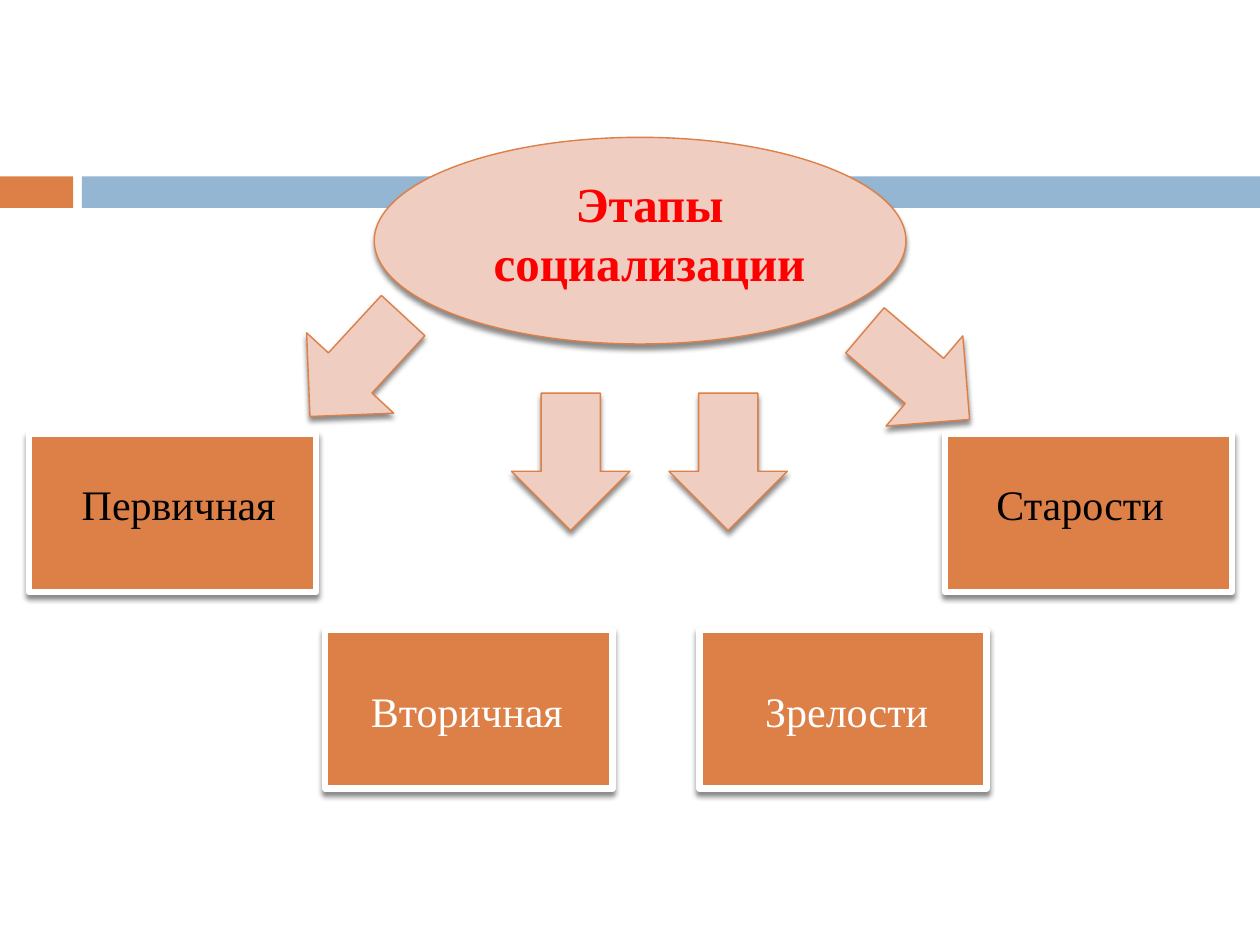
from lxml.etree import SubElement
from pptx import Presentation
from pptx.dml.color import RGBColor
from pptx.enum.shapes import MSO_SHAPE
from pptx.enum.text import MSO_ANCHOR, MSO_AUTO_SIZE, PP_ALIGN
from pptx.oxml.ns import qn
from pptx.util import Inches, Pt

HUES = {"orange": "DD8047", "blue": "94B6D2", "pink": "EFCDC1",
        "white": "FFFFFF", "black": "000000", "red": "FF0000"}
FONT = "Times New Roman"
TITLE = "Этапы социализации"
BANDS = [(0, 0.58, "orange"), (0.65, 9.35, "blue")]
STAGES = [
    ("Первичная", (0.23, 3.44), (0.55, 3.75, 1.88), PP_ALIGN.LEFT, "black"),
    ("Вторичная", (2.58, 5), (2.73, 5.39, 1.95), PP_ALIGN.CENTER, "white"),
    ("Зрелости", (5.55, 5), (5.78, 5.39, 1.88), PP_ALIGN.CENTER, "white"),
    ("Старости", (7.5, 3.44), (7.81, 3.75, 1.72), PP_ALIGN.LEFT, "black"),
]
ARROWS = [(2.36, 2.36, 42.7), (4.06, 3.12, 0), (5.31, 3.12, 0), (6.81, 2.43, 310.4)]


def color(name):
    return RGBColor.from_string(HUES[name])


def shade(shape):
    props = shape._element.spPr
    effects = props.find(qn("a:effectLst"))
    shadow = SubElement(effects, qn("a:outerShdw"), blurRad=str(Pt(3)),
                        dist=str(Pt(2.4)), dir="5400000", rotWithShape="0")
    tint = SubElement(shadow, qn("a:srgbClr"), val=HUES["black"])
    SubElement(tint, qn("a:alpha"), val="45000")


def draw(kind, box, fill, line=None, width=0):
    shape = slide.shapes.add_shape(kind, *map(Inches, box))
    shape.shadow.inherit = False
    shape.fill.solid()
    shape.fill.fore_color.rgb = color(fill)
    if line:
        shape.line.color.rgb = color(line)
        shape.line.width = Pt(width)
        shade(shape)
    else:
        shape.line.fill.background()
    return shape


def write(shape, box, text, size, hue, align, bold=False):
    shape.left, shape.top, shape.width, shape.height = map(Inches, box)
    frame = shape.text_frame
    frame.word_wrap = True
    frame.auto_size = MSO_AUTO_SIZE.SHAPE_TO_FIT_TEXT
    frame.vertical_anchor = MSO_ANCHOR.TOP
    para = frame.paragraphs[0]
    para.alignment = align
    run = para.add_run()
    run.text = text
    run.font.name = FONT
    run.font.size = Pt(size)
    run.font.bold = bold
    run.font.color.rgb = color(hue)


deck = Presentation()
deck.slide_width, deck.slide_height = Inches(10), Inches(7.5)
slide = deck.slides.add_slide(deck.slide_layouts[5])

for left, width, hue in BANDS:
    draw(MSO_SHAPE.RECTANGLE, (left, 1.4, width, 0.25), hue)
draw(MSO_SHAPE.OVAL, (2.97, 1.09, 4.22, 1.64), "pink", "orange", 0.79)

for label, spot, box, align, hue in STAGES:
    draw(MSO_SHAPE.RECTANGLE, (*spot, 2.28, 1.26), "orange", "white", 3.75)
    note = slide.shapes.add_textbox(0, 0, 0, 0)
    write(note, (*box, 0.5), label, 24, hue, align)

title = slide.shapes.title
write(title, (3.67, 1.33, 2.97, 1.04), TITLE, 28, "red", PP_ALIGN.CENTER, True)
slide.shapes._spTree.append(title._element)

for left, top, turn in ARROWS:
    arrow = draw(MSO_SHAPE.DOWN_ARROW, (left, top, 0.94, 1.09), "pink", "orange", 0.79)
    arrow.rotation = turn

deck.save("out.pptx")
